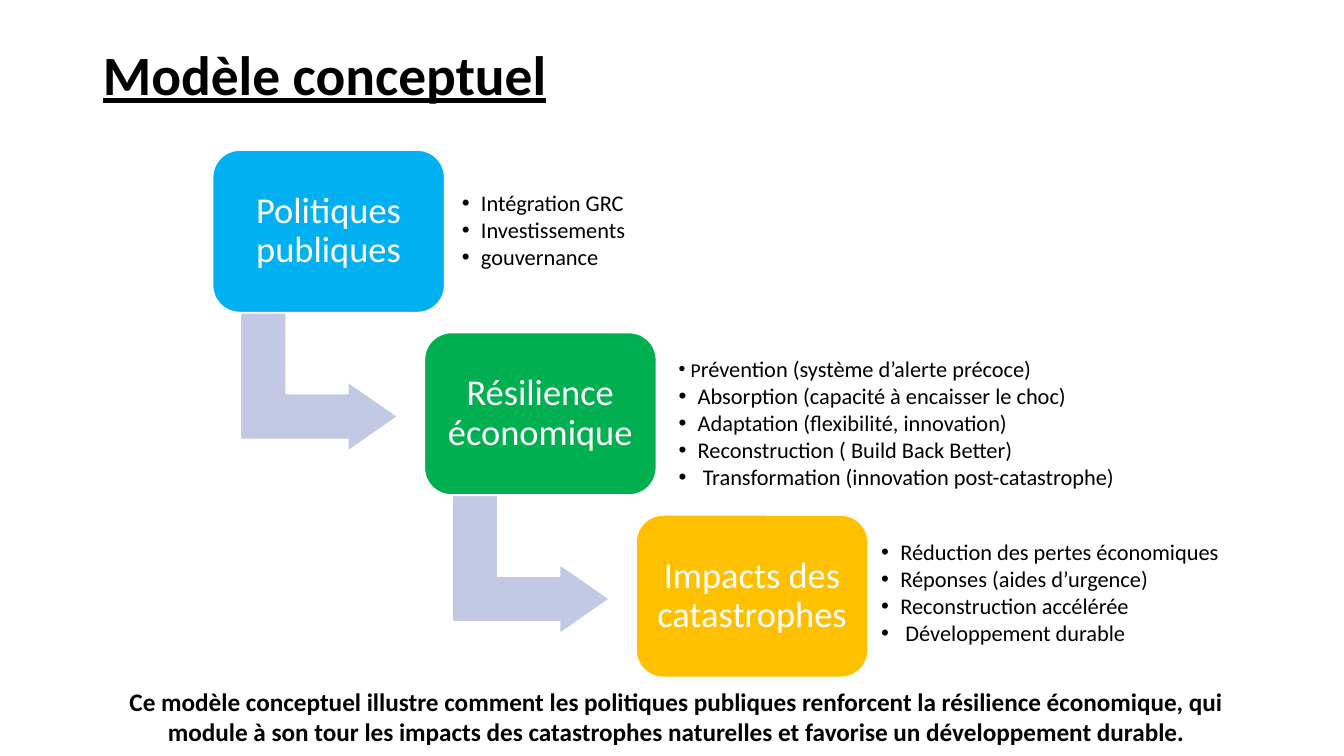
from dataclasses import dataclass

from lxml import etree
from pptx import Presentation
from pptx import util as u
from pptx.dml.color import RGBColor
from pptx.enum import shapes, text
from pptx.oxml.ns import qn

# Content: a step is (label, colour name, list box, list inset, items);
# an item given as a pair starts with a smaller lead
TITLE = "Modèle conceptuel"
STEPS = [
    ("Politiques publiques", "blue", (451, 164, 245, 130), 7,
     ["Intégration GRC", "Investissements", "gouvernance"]),
    ("Résilience économique", "green", (667, 345, 477, 151), 6,
     [("P", "révention (système d’alerte précoce)"),
      "Absorption (capacité à encaisser le choc)",
      "Adaptation (flexibilité, innovation)",
      "Reconstruction ( Build Back Better)",
      " Transformation (innovation post-catastrophe)"]),
    ("Impacts des catastrophes", "amber", (865, 524, 355, 130), 9,
     ["Réduction des pertes économiques", "Réponses (aides d’urgence)",
      "Reconstruction accélérée", " Développement durable"]),
]
CONCLUSION = (
    "Ce modèle conceptuel illustre comment les politiques publiques "
    "renforcent la résilience économique, qui module à son tour les impacts "
    "des catastrophes naturelles et favorise un développement durable."
)

# Layout, in px at 100 px to the inch
PX = 9144
SLIDE = (1333, 750)
TITLE_BOX = (92, 40, 1150, 73)
CONCLUSION_BOX = (101, 676, 1140, 71)
STEP_START, STEP_SHIFT, STEP_SIZE = (211, 149), (210, 181), (230, 161)
ARROW_OFFSET, ARROW_SIZE = (37, 152), (137, 156)
INDENT, LEAD_INDENT = 19, 12
LIST_SLOTS, CONCLUSION_SLOT = (2, 4, 1), 3


@dataclass(frozen=True)
class Theme:
    font: str = "Calibri"
    black: str = "000000"
    white: str = "FFFFFF"
    blue: str = "00B0F0"
    green: str = "00B050"
    amber: str = "FFC000"
    arrow: str = "C1C9E4"
    title: float = 39.6
    step: int = 26
    item: int = 16
    lead: int = 14
    conclusion: int = 18


THEME = Theme()
ALIGN, ANCHOR, FIT = text.PP_ALIGN, text.MSO_ANCHOR, text.MSO_AUTO_SIZE


def px(*lengths):
    return [u.Emu(length * PX) for length in lengths]


def apply(target, formats):
    for name, value in formats.items():
        setattr(target, name, value)


def place(placeholder, box):
    apply(placeholder, dict(zip(("left", "top", "width", "height"), px(*box))))


def set_frame(frame, anchor, fit=FIT.NONE, inset=None):
    apply(frame, {"word_wrap": True, "auto_size": fit, "vertical_anchor": anchor})
    if inset is not None:
        sides = ("margin_left", "margin_top", "margin_right", "margin_bottom")
        apply(frame, dict.fromkeys(sides, px(inset)[0]))


def write(paragraph, words, size, color=THEME.black, bold=False, underline=False):
    run = paragraph.add_run()
    run.text = words
    apply(run.font, {"name": THEME.font, "size": u.Pt(size), "bold": bold,
                     "underline": underline})
    run.font.color.rgb = RGBColor.from_string(color)


def set_paragraph(paragraph, align, line=1.0, after=0):
    apply(paragraph, {"alignment": align, "line_spacing": line,
                      "space_before": u.Pt(0), "space_after": u.Pt(after)})


def add_bullet(paragraph, indent):
    props = paragraph._p.get_or_add_pPr()
    props.set("marL", str(indent * PX))
    props.set("indent", str(-indent * PX))
    etree.SubElement(props, qn("a:buChar")).set("char", "•")


def add_block(slide, kind, corner, size, fill):
    block = slide.shapes.add_shape(kind, *px(*corner, *size))
    block.shadow.inherit = False
    block.fill.solid()
    block.fill.fore_color.rgb = RGBColor.from_string(fill)
    block.line.color.rgb = RGBColor.from_string(THEME.white)
    block.line.width = u.Pt(1)
    return block


def add_step(slide, corner, label, fill):
    step = add_block(slide, shapes.MSO_SHAPE.ROUNDED_RECTANGLE, corner, STEP_SIZE, fill)
    step.adjustments[0] = 0.167
    set_frame(step.text_frame, ANCHOR.MIDDLE, inset=11)
    paragraph = step.text_frame.paragraphs[0]
    set_paragraph(paragraph, ALIGN.CENTER, 0.9)
    write(paragraph, label, THEME.step, THEME.white)


def add_arrow(slide, step_corner):
    corner = [a + b for a, b in zip(step_corner, ARROW_OFFSET)]
    arrow = add_block(slide, shapes.MSO_SHAPE.BENT_UP_ARROW, corner, ARROW_SIZE, THEME.arrow)
    arrow.rotation = 90
    for index, value in enumerate((0.33, 0.25, 0.36)):
        arrow.adjustments[index] = value


def fill_list(placeholder, box, inset, items):
    place(placeholder, box)
    frame = placeholder.text_frame
    set_frame(frame, ANCHOR.MIDDLE, inset=inset)
    for index, item in enumerate(items):
        paragraph = frame.add_paragraph() if index else frame.paragraphs[0]
        set_paragraph(paragraph, ALIGN.LEFT, 0.9, 2)
        has_lead = isinstance(item, tuple)
        add_bullet(paragraph, LEAD_INDENT if has_lead else INDENT)
        lead, rest = item if has_lead else ("", item)
        if lead:
            write(paragraph, lead, THEME.lead)
        write(paragraph, rest, THEME.item)


def main():
    deck = Presentation()
    deck.slide_width, deck.slide_height = px(*SLIDE)
    slide = deck.slides.add_slide(deck.slide_layouts.get_by_name("Comparison"))
    slots = {slot.placeholder_format.idx: slot for slot in slide.placeholders}

    # Title
    title = slide.shapes.title
    place(title, TITLE_BOX)
    set_frame(title.text_frame, ANCHOR.MIDDLE)
    heading = title.text_frame.paragraphs[0]
    set_paragraph(heading, ALIGN.LEFT, 0.9)
    write(heading, TITLE, THEME.title, bold=True, underline=True)

    # Staircase of steps, each with its list and an arrow to the next
    for index, (label, color, box, inset, items) in enumerate(STEPS):
        corner = [start + index * shift for start, shift in zip(STEP_START, STEP_SHIFT)]
        if index < len(STEPS) - 1:
            add_arrow(slide, corner)
        add_step(slide, corner, label, getattr(THEME, color))
        fill_list(slots[LIST_SLOTS[index]], box, inset, items)

    # Conclusion
    conclusion = slots[CONCLUSION_SLOT]
    place(conclusion, CONCLUSION_BOX)
    set_frame(conclusion.text_frame, ANCHOR.TOP, FIT.SHAPE_TO_FIT_TEXT)
    closing = conclusion.text_frame.paragraphs[0]
    set_paragraph(closing, ALIGN.CENTER)
    write(closing, CONCLUSION, THEME.conclusion, bold=True)

    deck.save("out.pptx")


if __name__ == "__main__":
    main()
